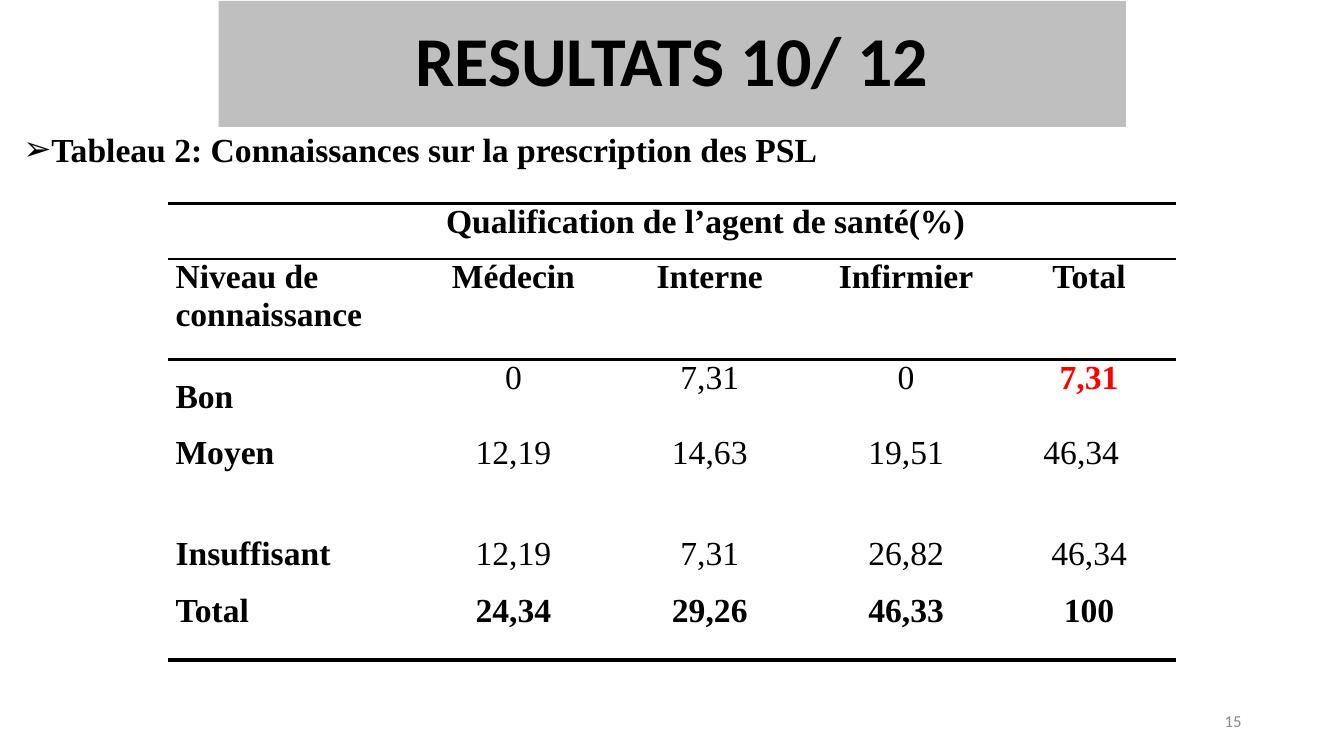
import pptx
import pptx.util
import pptx.dml.color
import pptx.enum.text
import pptx.oxml
from pptx.oxml.ns import qn, nsdecls

Pt = pptx.util.Pt
ALIGN = pptx.enum.text.PP_ALIGN
ANCHOR = pptx.enum.text.MSO_ANCHOR
HEX = {"black": "000000", "band": "BFBFBF", "red": "FF0000", "gray": "898989"}
SERIF = "Times New Roman"
PLAIN = "{2D5ABB26-0587-4C30-8999-92F81FD0307C}"  # no style, no grid

COLS = [178, 137.5, 143, 137.5, 124]
ROWS = [39.6, 72, 53.3, 72, 41, 48.3]
DATA = [
    ["", "Qualification de l’agent de santé(%) ", "", "", ""],
    ["Niveau de\nconnaissance", "Médecin", "Interne", "Infirmier", "Total"],
    ["Bon", "0", "7,31", "0", "7,31"],
    ["Moyen", "12,19", "14,63", "19,51", "46,34"],
    ["Insuffisant", "12,19", "7,31", "26,82", "46,34"],
    ["Total", "24,34", "29,26", "46,33", "100"],
]
RULES = {0: {"lnT": 2.25, "lnB": 2.25}, 1: {"lnT": 2.25}, 5: {"lnB": 3}}


def color(name):
    return pptx.dml.color.RGBColor.from_string(HEX[name])


def place(shape, left, top, width, height):
    shape.left, shape.top = Pt(left), Pt(top)
    shape.width, shape.height = Pt(width), Pt(height)


def style(par, size, face, tint="black", bold=False, align=ALIGN.LEFT):
    font = par.font
    font.size, font.name, font.bold = Pt(size), face, bold
    font.color.rgb = color(tint)
    par.alignment = align


def indent(par, left, first=0):
    props = par._p.get_or_add_pPr()
    props.set("marL", str(Pt(left)))
    props.set("indent", str(Pt(first)))
    return props


def add_title(slide, text):
    title = slide.shapes.title
    place(title, 156.2, 0.7, 648, 90)
    title.fill.solid()
    title.fill.fore_color.rgb = color("band")
    frame = title.text_frame
    frame.text = text
    frame.vertical_anchor = ANCHOR.MIDDLE
    frame.auto_size = pptx.enum.text.MSO_AUTO_SIZE.NONE
    par = frame.paragraphs[0]
    style(par, 50, "Calibri", bold=True, align=ALIGN.CENTER)
    par.line_spacing = 0.9


def add_body(slide, text):
    body = slide.placeholders[1]
    place(body, 9.4, 91.4, 950.4, 438.5)
    frame = body.text_frame
    frame.text = text
    frame.auto_size = pptx.enum.text.MSO_AUTO_SIZE.NONE
    par = frame.paragraphs[0]
    style(par, 24, SERIF, bold=True)
    par.line_spacing, par.space_before = 0.9, Pt(10)
    props = indent(par, 18, -18)
    mark = pptx.oxml.parse_xml(f'<a:buChar {nsdecls("a")} char="➢"/>')
    # The bullet must come before the default run properties
    last = props.find(qn("a:defRPr"))
    if last is None:
        props.append(mark)
    else:
        last.addprevious(mark)


def add_rule(cell, side, width):
    line = pptx.oxml.parse_xml(
        f'<a:{side} {nsdecls("a")} w="{Pt(width)}"><a:solidFill>'
        f'<a:srgbClr val="{HEX["black"]}"/></a:solidFill></a:{side}>')
    cell._tc.get_or_add_tcPr().insert(0, line)


def fill_cell(cell, text, row, col):
    cell.margin_left = cell.margin_right = Pt(5.4)
    cell.margin_top = cell.margin_bottom = Pt(0)
    cell.fill.background()
    cell.text = text
    bold = col == 0 or row in (0, 1, 5) or (row, col) == (2, 4)
    tint = "red" if (row, col) == (2, 4) else "black"
    align = ALIGN.CENTER if col else ALIGN.LEFT
    for par in cell.text_frame.paragraphs:
        style(par, 24, SERIF, tint, bold, align)
    # Bottom goes in first, so that top precedes it
    for side, width in sorted(RULES.get(row, {}).items()):
        add_rule(cell, side, width)


def add_grid(slide):
    frame = slide.shapes.add_table(len(ROWS), len(COLS), Pt(120), Pt(145.4),
                                   Pt(sum(COLS)), Pt(sum(ROWS)))
    table = frame.table
    table.first_row = table.horz_banding = False
    table._tbl.tblPr.find(qn("a:tableStyleId")).text = PLAIN
    for col, width in zip(table.columns, COLS):
        col.width = Pt(width)
    for row, height in zip(table.rows, ROWS):
        row.height = Pt(height)
    for r, line in enumerate(DATA):
        for c, text in enumerate(line):
            fill_cell(table.cell(r, c), text, r, c)
    table.cell(0, 1).merge(table.cell(0, 3))
    # Two cells set apart from the rest
    table.cell(2, 0).text_frame.paragraphs[0].line_spacing = 1.5
    shift = table.cell(3, 4).text_frame.paragraphs[0]
    shift.alignment = ALIGN.LEFT
    indent(shift, 24)


def add_number(slide, text):
    box = slide.shapes.add_textbox(Pt(678), Pt(500.5), Pt(216), Pt(28.8))
    frame = box.text_frame
    frame.word_wrap = True
    frame.vertical_anchor = ANCHOR.MIDDLE
    frame.text = text
    style(frame.paragraphs[0], 12, "Calibri", "gray", align=ALIGN.RIGHT)


def main():
    deck = pptx.Presentation()
    deck.slide_width, deck.slide_height = Pt(960), Pt(540)
    slide = deck.slides.add_slide(deck.slide_layouts[1])
    add_title(slide, "RESULTATS 10/ 12")
    add_body(slide, "Tableau 2: Connaissances sur la prescription des PSL")
    add_number(slide, "15")
    add_grid(slide)
    deck.save("out.pptx")


if __name__ == "__main__":
    main()
